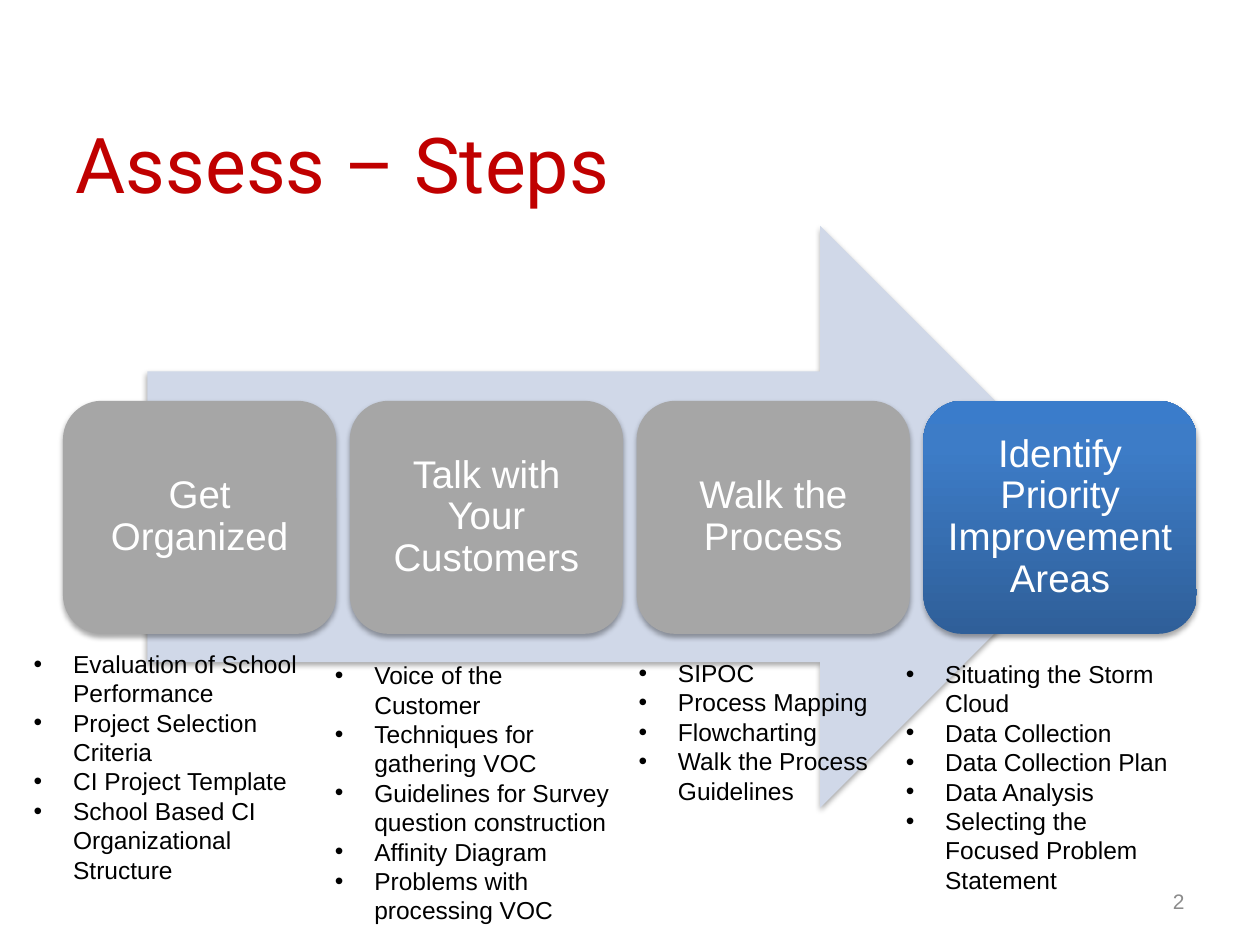
from copy import deepcopy

from pptx import Presentation
from pptx.dml.color import RGBColor
from pptx.enum.shapes import MSO_SHAPE
from pptx.enum.text import MSO_ANCHOR, PP_ALIGN
from pptx.oxml import parse_xml
from pptx.oxml.ns import nsdecls, qn
from pptx.util import Pt

THEME = {
    "title": RGBColor(0xC0, 0x00, 0x00),
    "arrow": RGBColor(0xD0, 0xD8, 0xE8),
    "done": RGBColor(0xA6, 0xA6, 0xA6),
    "current": [(0, "2F5F99"), (0.8, "3D7CC7"), (1, "3A7CCB")],
    "on_card": RGBColor(0xFF, 0xFF, 0xFF),
    "body": RGBColor(0x00, 0x00, 0x00),
    "number": RGBColor(0x8C, 0x8C, 0x8C),
    "title_font": "Roboto", "font": "Arial",
    "title_size": Pt(44), "card_size": Pt(22),
    "body_size": Pt(14), "number_size": Pt(12),
}

# Each step: heading, top and left of its list, list items
STEPS = [
    ("Get Organized", 12.2, 367.2, [
        "Evaluation of School Performance", "Project Selection Criteria",
        "CI Project Template", "School Based CI Organizational Structure"]),
    ("Talk with Your Customers", 184.3, 373.7, [
        "Voice of the Customer", "Techniques for gathering VOC",
        "Guidelines for Survey question construction", "Affinity Diagram",
        "Problems with processing VOC"]),
    ("Walk the Process", 357.8, 372.5, [
        "SIPOC", "Process Mapping", "Flowcharting",
        "Walk the Process Guidelines"]),
    ("Identify Priority Improvement Areas", 510.5, 373, [
        "Situating the Storm Cloud", "Data Collection",
        "Data Collection Plan", "Data Analysis",
        "Selecting the Focused Problem Statement"]),
]
CARD_LEFT, CARD_TOP, CARD_WIDTH, CARD_HEIGHT, CARD_PITCH = 36, 229, 156.2, 133.2, 163.9


def style(paragraph, size, color, font=THEME["font"]):
    paragraph.font.name = font
    paragraph.font.size = size
    paragraph.font.color.rgb = color


def add_shadowed(slide, kind, left, top, width, height):
    shape = slide.shapes.add_shape(kind, Pt(left), Pt(top), Pt(width), Pt(height))
    shape.line.fill.background()
    shape.fill.solid()
    shape.shadow.inherit = False
    shape._element.spPr.find(qn("a:effectLst")).append(parse_xml(
        f'<a:outerShdw {nsdecls("a")} blurRad="{Pt(3.1)}" dist="{Pt(1.8)}" '
        'dir="5400000" rotWithShape="0"><a:srgbClr val="000000">'
        '<a:alpha val="35000"/></a:srgbClr></a:outerShdw>'))
    return shape


prs = Presentation()
prs.slide_width, prs.slide_height = Pt(720), Pt(540)
slide = prs.slides.add_slide(prs.slide_layouts[5])

# Title
title = slide.shapes.title
title.left, title.top, title.width, title.height = Pt(36), Pt(48), Pt(546), Pt(90)
title.text_frame.text = "Assess – Steps"
title.text_frame.vertical_anchor = MSO_ANCHOR.MIDDLE
heading = title.text_frame.paragraphs[0]
heading.alignment = PP_ALIGN.LEFT
style(heading, THEME["title_size"], THEME["title"], THEME["title_font"])

# Arrow behind the steps
arrow = add_shadowed(slide, MSO_SHAPE.RIGHT_ARROW, 84.2, 129, 550.8, 332.6)
arrow.fill.fore_color.rgb = THEME["arrow"]

# Step cards
for index, (step, *_) in enumerate(STEPS):
    card = add_shadowed(slide, MSO_SHAPE.ROUNDED_RECTANGLE,
                        CARD_LEFT + index * CARD_PITCH, CARD_TOP, CARD_WIDTH, CARD_HEIGHT)
    if index < len(STEPS) - 1:
        card.fill.fore_color.rgb = THEME["done"]
    else:
        card.fill.gradient()
        card.fill.gradient_angle = 90
        stops = card._element.spPr.find(".//" + qn("a:gsLst"))
        stops.append(deepcopy(stops[-1]))
        for stop, (position, color) in zip(card.fill.gradient_stops, THEME["current"]):
            stop.position = position
            stop.color.rgb = RGBColor.from_string(color)
    frame = card.text_frame
    frame.word_wrap = True
    frame.vertical_anchor = MSO_ANCHOR.MIDDLE
    frame.margin_left = frame.margin_right = Pt(6.6)
    frame.margin_top = frame.margin_bottom = Pt(6.6)
    frame.text = step
    label = frame.paragraphs[0]
    label.alignment = PP_ALIGN.CENTER
    label.line_spacing = 0.9
    style(label, THEME["card_size"], THEME["on_card"])

# Bulleted list under each card
for _, left, top, items in STEPS:
    tasks = slide.shapes.add_textbox(Pt(left), Pt(top), Pt(173.5), Pt(29.4 * len(items)))
    tasks.text_frame.word_wrap = True
    tasks.text_frame.text = "\n".join(items)
    for task in tasks.text_frame.paragraphs:
        properties = task._p.get_or_add_pPr()
        properties.set("marL", str(Pt(22.5)))
        properties.set("indent", str(-Pt(22.5)))
        properties.append(parse_xml(f'<a:buFont {nsdecls("a")} typeface="Arial"/>'))
        properties.append(parse_xml(f'<a:buChar {nsdecls("a")} char="•"/>'))
        style(task, THEME["body_size"], THEME["body"])

# Slide number
number = slide.shapes.add_textbox(Pt(516), Pt(500.5), Pt(168), Pt(28.8))
number.text_frame.word_wrap = True
number.text_frame.vertical_anchor = MSO_ANCHOR.MIDDLE
number.text_frame.text = "2"
digit = number.text_frame.paragraphs[0]
digit.alignment = PP_ALIGN.RIGHT
style(digit, THEME["number_size"], THEME["number"])

prs.save("out.pptx")
